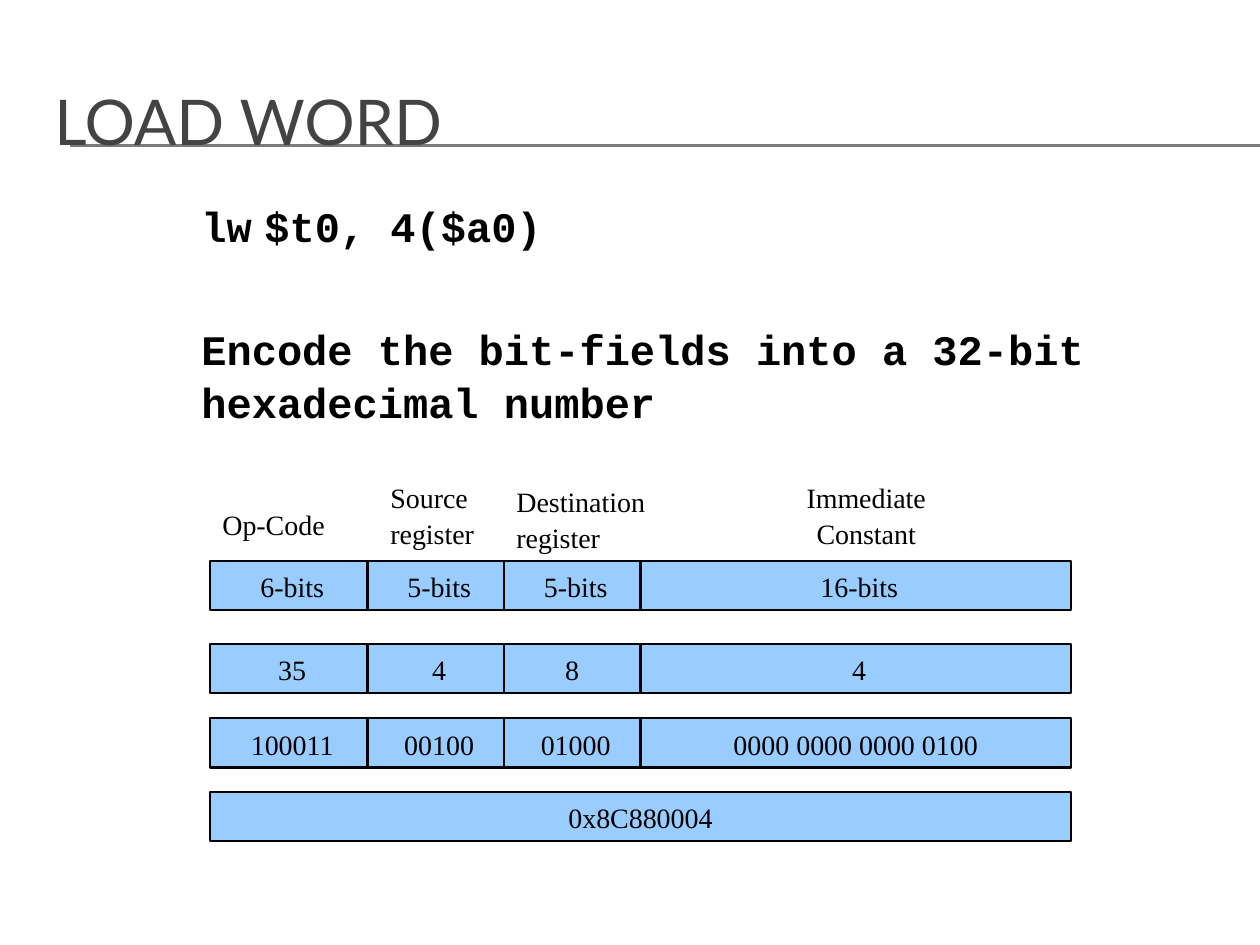
"""Build the Load Word slide, which encodes an instruction as a 32-bit number."""
from lxml import etree
from pptx import Presentation
from pptx.dml.color import RGBColor
from pptx.enum.shapes import MSO_CONNECTOR, MSO_SHAPE
from pptx.enum.text import MSO_ANCHOR, PP_ALIGN
from pptx.oxml.ns import qn
from pptx.util import Inches, Pt

LEFT, CENTER = PP_ALIGN.LEFT, PP_ALIGN.CENTER
TOP, MIDDLE = MSO_ANCHOR.TOP, MSO_ANCHOR.MIDDLE
RECTANGLE, STRAIGHT = MSO_SHAPE.RECTANGLE, MSO_CONNECTOR.STRAIGHT
COLORS = {"title": "434342", "rule": "797B7E", "field": "99CCFF", "ink": "000000"}

prs = Presentation()
prs.slide_width, prs.slide_height = Inches(10), Inches(7.5)
slide = prs.slides.add_slide(prs.slide_layouts[6])
UNIT = prs.slide_width / 120


def grid(*cells):
    return [round(cell * UNIT) for cell in cells]


def write(holder, lines, font, size, align=LEFT, anchor=TOP, color="ink", bold=False, gap=0, spacing=1.06):
    frame = holder.text_frame
    frame.word_wrap = True
    frame.vertical_anchor = anchor
    for index, line in enumerate(lines):
        paragraph = frame.add_paragraph() if index else frame.paragraphs[0]
        paragraph.text = line
        paragraph.alignment = align
        paragraph.line_spacing = spacing
        paragraph.space_before = Pt(gap if index else 0)
        paragraph.font.name = font
        paragraph.font.size = Pt(size)
        paragraph.font.bold = bold
        paragraph.font.color.rgb = RGBColor.from_string(COLORS[color])


for rule_row in (13.8, 13.9):
    rule = slide.shapes.add_connector(STRAIGHT, *grid(6.7, rule_row, 120, rule_row))
    rule.line.color.rgb = RGBColor.from_string(COLORS["rule"])
    rule.line.width = Pt(0.75)
    etree.SubElement(rule._element.spPr, qn("a:effectLst"))

title = slide.shapes.add_textbox(*grid(4, 6, 114, 11))
write(title, ["LOAD WORD"], "Lato", 36, anchor=MIDDLE, color="title", spacing=1.0)

instruction = slide.shapes.add_textbox(*grid(18, 18.2, 88, 22.8))
write(instruction, ["lw\t$t0, 4($a0)", "Encode the bit-fields into a 32-bit hexadecimal number"],
      "Courier New", 24, bold=True, gap=40)

headings = [
    ("Op-Code", 20, 47.6, 15, 4.4, LEFT),
    ("Source register", 36, 45, 11, 7.7, LEFT),
    ("Destination register", 48, 45.4, 16, 7.7, LEFT),
    ("Immediate Constant", 72, 45, 21, 7.7, CENTER),
]
for heading, column, row, width, height, align in headings:
    label = slide.shapes.add_textbox(*grid(column, row, width, height))
    write(label, [heading], "Times New Roman", 16, align)

FIELD_WIDTHS = [15, 13, 13, 41]
encodings = [
    (53.4, FIELD_WIDTHS, [" 6-bits", " 5-bits", " 5-bits", " 16-bits"]),
    (61.3, FIELD_WIDTHS, [" 35", " 4", "8", " 4"]),
    (68.4, FIELD_WIDTHS, [" 100011", " 00100", " 01000", " 0000 0000 0000 0100 "]),
    (75.4, [sum(FIELD_WIDTHS)], ["0x8C880004"]),
]
for row, widths, values in encodings:
    column = 20
    for width, value in zip(widths, values):
        field = slide.shapes.add_shape(RECTANGLE, *grid(column, row, width, 4.7))
        field.shadow.inherit = False
        field.fill.solid()
        field.fill.fore_color.rgb = RGBColor.from_string(COLORS["field"])
        field.line.color.rgb = RGBColor.from_string(COLORS["ink"])
        field.line.width = Pt(1.25)
        write(field, [value], "Times New Roman", 16, CENTER, MIDDLE)
        column += width

prs.save("out.pptx")
